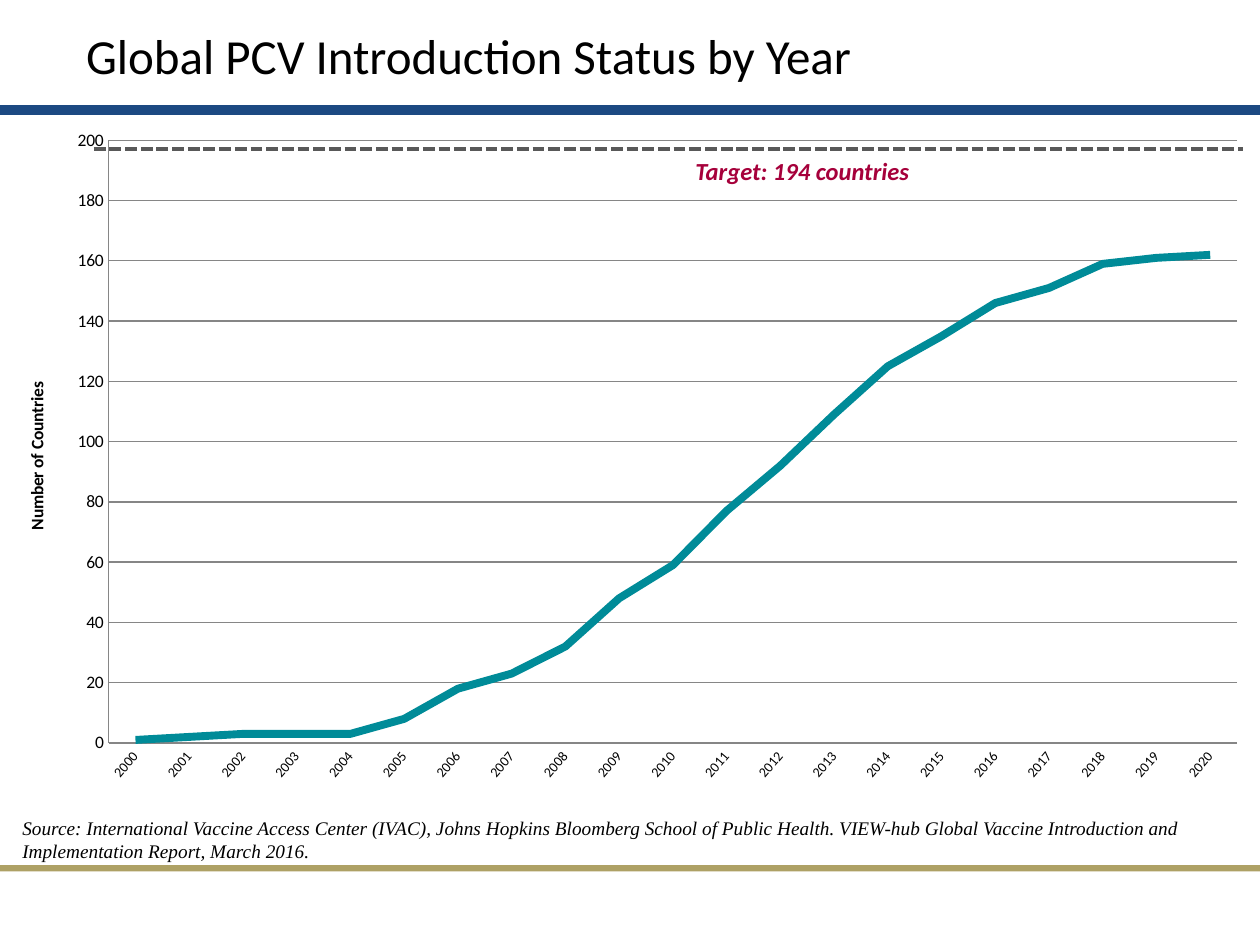
import pptx
import pptx.chart.data
import pptx.dml.color
import pptx.enum.chart
import pptx.enum.dml
import pptx.enum.shapes
import pptx.enum.text
import pptx.oxml
import pptx.oxml.ns
import pptx.util
from lxml import etree

Cm = pptx.util.Cm
Pt = pptx.util.Pt
RGBColor = pptx.dml.color.RGBColor
NAVY = RGBColor(0x1C, 0x49, 0x82)
GOLD = RGBColor(0x84, 0x70, 0x13)
BLACK = RGBColor(0, 0, 0)
TEAL = RGBColor(0, 0x8B, 0x98)
GREY = RGBColor(0x59, 0x59, 0x59)
RULE = RGBColor(0x86, 0x86, 0x86)
WINE = RGBColor(0xA6, 0, 0x3B)
COUNTS = (1, 2, 3, 3, 3, 8, 18, 23, 32, 48, 59, 77, 92, 109, 125,
          135, 146, 151, 159, 161, 162)


def apply(item, **form):
    """Set each format value on the item."""
    for key, value in form.items():
        setattr(item, key, value)


def style(font, size, color=BLACK, **form):
    """Give a font its size, colour and other traits."""
    apply(font, **{"name": "Calibri", "size": Pt(size), **form})
    font.color.rgb = color


def write(shape, text, size, color=BLACK, **form):
    """Fill a text shape with one styled, top-left paragraph."""
    frame = shape.text_frame
    frame.text = text
    apply(frame, word_wrap=True,
          auto_size=pptx.enum.text.MSO_AUTO_SIZE.NONE,
          vertical_anchor=pptx.enum.text.MSO_ANCHOR.TOP)
    line = frame.paragraphs[0]
    line.alignment = pptx.enum.text.PP_ALIGN.LEFT
    style(line.runs[0].font, size, color, **form)


def add_band(slide, box, color, alpha=100):
    """Draw a plain band across the box."""
    band = slide.shapes.add_shape(
        pptx.enum.shapes.MSO_SHAPE.RECTANGLE, *map(Cm, box))
    band.shadow.inherit = False
    band.fill.solid()
    band.fill.fore_color.rgb = color
    band.line.fill.background()
    if alpha < 100:
        tint = band.fill._xPr.find(".//" + pptx.oxml.ns.qn("a:srgbClr"))
        etree.SubElement(tint, pptx.oxml.ns.qn("a:alpha"), val=str(alpha * 1000))


def add_head(slide, box):
    """Place the title in the box with the navy band under it."""
    left, top, width, height = box
    title = slide.shapes.title
    apply(title, **dict(zip(("left", "top", "width", "height"), map(Cm, box))))
    write(title, "Global PCV Introduction Status by Year", 28)
    add_band(slide, (0, top + 1.74, 25.4, 0.2), NAVY)


def add_foot(slide, box):
    """Place the source note in the box with the gold band under it."""
    left, top, width, height = box
    note = slide.shapes.add_textbox(*map(Cm, box))
    write(note, "Source: International Vaccine Access Center (IVAC), "
          "Johns Hopkins Bloomberg School of Public Health. VIEW-hub Global "
          "Vaccine Introduction and Implementation Report, March 2016.",
          11, name="Times New Roman", italic=True)
    add_band(slide, (0, top + 1.11, 25.4, 0.13), GOLD, 65)


def set_plot(chart, box, inner):
    """Fix the inner plot area within the box and slant the year labels."""
    qn = pptx.oxml.ns.qn
    plot = chart._chartSpace.find(".//" + qn("c:plotArea"))
    for old in plot.findall(qn("c:layout")):
        plot.remove(old)
    parts = "".join(f'<c:{key} val="{size / whole}"/>' for key, size, whole
                    in zip("xywh", inner, box[2:] * 2))
    plot.insert(0, pptx.oxml.parse_xml(
        f'<c:layout {pptx.oxml.ns.nsdecls("c")}><c:manualLayout>'
        '<c:layoutTarget val="inner"/><c:xMode val="edge"/>'
        f'<c:yMode val="edge"/>{parts}</c:manualLayout></c:layout>'))
    body = plot.find(f'{qn("c:catAx")}/{qn("c:txPr")}/{qn("a:bodyPr")}')
    body.set("rot", str(-50 * 60000))
    body.set("vert", "horz")


def add_graph(slide, box):
    """Draw the line chart of countries by year in the box."""
    kinds = pptx.enum.chart
    data = pptx.chart.data.CategoryChartData()
    data.categories = [str(2000 + step) for step in range(len(COUNTS))]
    data.add_series("Series 1", COUNTS)
    chart = slide.shapes.add_chart(
        kinds.XL_CHART_TYPE.LINE, *map(Cm, box), data).chart
    apply(chart, has_legend=False, has_title=False)
    style(chart.font, 10)
    chart.plots[0].vary_by_categories = False

    curve = chart.plots[0].series[0]
    curve.smooth = False
    curve.marker.style = kinds.XL_MARKER_STYLE.NONE
    curve.format.line.width = Pt(4.5)
    curve.format.line.color.rgb = TEAL

    years, count = chart.category_axis, chart.value_axis
    apply(years, has_major_gridlines=False)
    apply(count, minimum_scale=0, maximum_scale=200, major_unit=20,
          has_major_gridlines=True)
    for axis, size in ((years, 8), (count, 10)):
        apply(axis, major_tick_mark=kinds.XL_TICK_MARK.NONE,
              minor_tick_mark=kinds.XL_TICK_MARK.NONE)
        style(axis.tick_labels.font, size)
    for part in (years, count, count.major_gridlines):
        part.format.line.width = Pt(0.75)
        part.format.line.color.rgb = RULE

    label = count.axis_title.text_frame
    label.text = "Number of Countries"
    style(label.paragraphs[0].runs[0].font, 10, bold=True)
    set_plot(chart, box, (2.19, 0.46, 22.75, 12.15))


def add_goal(slide, box):
    """Draw the dashed target line on the box top and its label below."""
    left, top, width, height = box
    goal = slide.shapes.add_connector(
        pptx.enum.shapes.MSO_CONNECTOR.STRAIGHT,
        *map(Cm, (left, top, left + width, top)))
    apply(goal.line, width=Pt(2.25),
          dash_style=pptx.enum.dml.MSO_LINE.SQUARE_DOT)
    goal.line.color.rgb = GREY
    etree.SubElement(goal._element.spPr, pptx.oxml.ns.qn("a:effectLst"))
    label = slide.shapes.add_textbox(
        *map(Cm, (left + 11.88, top + 0.03, 6.53, height)))
    write(label, "Target: 194 countries", 14, WINE, bold=True, italic=True)


def main():
    """Build the slide and save it."""
    deck = pptx.Presentation()
    apply(deck, slide_width=Cm(25.4), slide_height=Cm(19.05))
    slide = deck.slides.add_slide(deck.slide_layouts[5])
    add_head(slide, (1.48, 0.38, 20.96, 2.34))
    add_foot(slide, (0.2, 16.33, 24.74, 1.19))
    add_graph(slide, (0, 2.37, 25.43, 13.67))
    add_goal(slide, (1.89, 3, 23.16, 0.84))
    deck.save("out.pptx")


if __name__ == "__main__":
    main()
